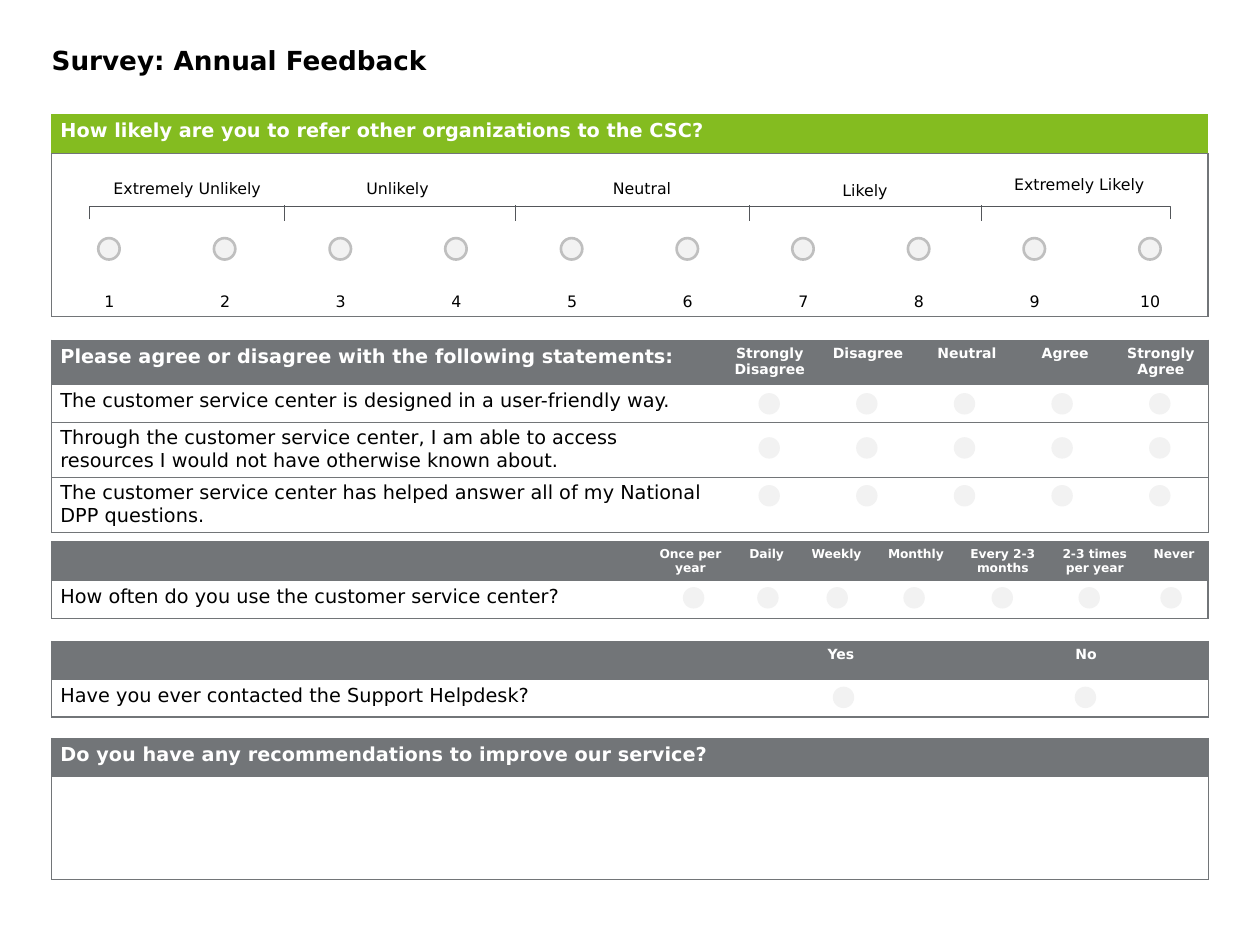
"""Build a one-page annual feedback survey slide."""
from dataclasses import dataclass

from lxml import etree
from pptx import Presentation
from pptx import util as u
from pptx.dml.color import RGBColor
from pptx.enum import shapes, text
from pptx.oxml import ns


@dataclass(frozen=True)
class Theme:
    """Colours, font and type sizes of the survey."""
    font: str = "DejaVu Sans"
    black: str = "000000"
    white: str = "FFFFFF"
    green: str = "84BC20"
    grey: str = "727578"
    scale_line: str = "53565A"
    dot: str = "F2F2F2"
    dot_line: str = "BFBFBF"
    title: int = 15
    body: int = 11
    label: int = 9
    option: int = 8
    small_option: int = 7


@dataclass(frozen=True)
class TextStyle:
    """Look of one piece of text."""
    size: int
    color: str
    bold: bool = False
    align: text.PP_ALIGN = text.PP_ALIGN.LEFT
    anchor: text.MSO_ANCHOR = text.MSO_ANCHOR.TOP


THEME = Theme()
CENTER = text.PP_ALIGN.CENTER
LEFT, WIDTH = 0.41, 9.18
DOT_SIZE = 0.17
NO_TABLE_STYLE = "{2D5ABB26-0587-4C30-8999-92F81FD0307C}"
TITLE = TextStyle(THEME.title, THEME.black, True)
HEADING = TextStyle(THEME.body, THEME.white, True)
OPTION = TextStyle(THEME.option, THEME.white, True, CENTER)
SMALL_OPTION = TextStyle(THEME.small_option, THEME.white, True, CENTER)
STATEMENT = TextStyle(THEME.body, THEME.black)
SCORE = TextStyle(THEME.label, THEME.black, False, CENTER, text.MSO_ANCHOR.BOTTOM)
LABEL = TextStyle(THEME.label, THEME.black, False, CENTER, text.MSO_ANCHOR.MIDDLE)


def rgb(color):
    """Turn a hex string into a colour."""
    return RGBColor.from_string(color)


def write(frame, words, style):
    """Write one styled paragraph into a text frame."""
    paragraph = frame.paragraphs[0]
    paragraph.alignment = style.align
    if not words:
        etree.SubElement(paragraph._p, ns.qn("a:endParaRPr"), sz=str(style.size * 100))
        return paragraph
    run = paragraph.add_run()
    run.text = words
    run.font.name = THEME.font
    run.font.size = u.Pt(style.size)
    run.font.bold = style.bold
    run.font.color.rgb = rgb(style.color)
    return paragraph


def set_margins(frame, side, end):
    """Set equal left and right, and equal top and bottom margins."""
    frame.margin_left = frame.margin_right = u.Inches(side)
    frame.margin_top = frame.margin_bottom = u.Inches(end)


def set_borders(cell, sides, color):
    """Draw a thin line on each named side of a cell and none elsewhere."""
    properties = cell._tc.get_or_add_tcPr()
    for side in "LRTB":
        line = etree.SubElement(properties, ns.qn(f"a:ln{side}"), w=str(u.Pt(0.75)))
        if side in sides:
            fill = etree.SubElement(line, ns.qn("a:solidFill"))
            etree.SubElement(fill, ns.qn("a:srgbClr"), val=color)
        else:
            etree.SubElement(line, ns.qn("a:noFill"))


def add_survey_table(slide, top, widths, heights, rows, first_styles, other_styles,
                     accent=THEME.grey):
    """Add a table with a coloured heading row and outlined answer rows."""
    frame = slide.shapes.add_table(
        len(rows), len(widths), u.Inches(LEFT), u.Inches(top),
        u.Inches(sum(widths)), u.Inches(sum(heights)))
    table = frame.table
    table.first_row = table.horz_banding = False
    table._tbl.tblPr.find(ns.qn("a:tableStyleId")).text = NO_TABLE_STYLE
    for column, width in zip(table.columns, widths):
        column.width = u.Inches(width)
    for index, (row, height) in enumerate(zip(rows, heights)):
        table.rows[index].height = u.Inches(height)
        heading = index == 0
        for position, words in enumerate(row):
            cell = table.cell(index, position)
            styles = other_styles if position else first_styles
            style = styles[0 if heading else 1]
            sides = "TB" + "L" * (position == 0) + "R" * (position == len(widths) - 1)
            set_borders(cell, sides, accent if heading else THEME.grey)
            if heading:
                cell.fill.solid()
                cell.fill.fore_color.rgb = rgb(accent)
            else:
                cell.fill.background()
            set_margins(cell, 0.07, 0.04)
            cell.vertical_anchor = style.anchor
            write(cell.text_frame, words, style)
    return table


def add_plain_shape(slide, kind, left, top, width, height, fill=None, line=None, weight=0.75):
    """Add a shape without shadow, with the given fill and line."""
    shape = slide.shapes.add_shape(
        kind, u.Inches(left), u.Inches(top), u.Inches(width), u.Inches(height))
    shape.shadow.inherit = False
    if fill:
        shape.fill.solid()
        shape.fill.fore_color.rgb = rgb(fill)
    else:
        shape.fill.background()
    if line:
        shape.line.color.rgb = rgb(line)
        shape.line.width = u.Pt(weight)
    else:
        shape.line.fill.background()
    return shape


def add_dots(slide, lefts, top, line=None):
    """Add a row of round answer buttons."""
    for left in lefts:
        add_plain_shape(slide, shapes.MSO_SHAPE.OVAL, left, top, DOT_SIZE, DOT_SIZE,
                        THEME.dot, line, 1.5)


def add_tick(slide, x):
    """Add a short vertical divider under the scale."""
    tick = slide.shapes.add_connector(
        shapes.MSO_CONNECTOR.STRAIGHT, u.Inches(x), u.Inches(1.63), u.Inches(x), u.Inches(1.75))
    tick.line.color.rgb = rgb(THEME.scale_line)
    tick.line.width = u.Pt(0.75)
    etree.SubElement(tick._element.spPr, ns.qn("a:effectLst"))


def add_label(slide, words, left, top, width, height):
    """Add a centred label above the scale."""
    shape = add_plain_shape(slide, shapes.MSO_SHAPE.RECTANGLE, left, top, width, height,
                            THEME.white)
    frame = shape.text_frame
    frame.word_wrap = True
    frame.vertical_anchor = LABEL.anchor
    set_margins(frame, 0, 0.1)
    write(frame, words, LABEL).line_spacing = 1.06


def add_title(slide, words):
    """Place and fill the title placeholder."""
    title = slide.shapes.title
    title.left, title.top = u.Inches(LEFT), u.Inches(0.35)
    title.width, title.height = u.Inches(WIDTH), u.Inches(0.32)
    set_margins(title.text_frame, 0, 0)
    title.text_frame.vertical_anchor = TITLE.anchor
    write(title.text_frame, words, TITLE)


def add_scale(slide):
    """Add the ten-point likelihood question."""
    question = "How likely are you to refer other organizations to the CSC?"
    scores = [str(score) for score in range(1, 11)]
    table = add_survey_table(
        slide, 0.91, [WIDTH / 10] * 10, [0.31, 1.29], [[question] + [""] * 9, scores],
        (HEADING, SCORE), (HEADING, SCORE), THEME.green)
    table.cell(0, 0).merge(table.cell(0, 9))
    add_dots(slide, [0.78 + WIDTH / 10 * step for step in range(10)], 1.89, THEME.dot_line)
    bracket = add_plain_shape(slide, shapes.MSO_SHAPE.RIGHT_BRACKET, 4.95, -2.6, 0.1, 8.58,
                              line=THEME.scale_line)
    bracket.adjustments[0] = 0
    bracket.rotation = 270
    for x in (2.26, 4.09, 5.95, 7.79):
        add_tick(slide, x)
    for words, left, top, width, height in (
            ("Extremely Unlikely", 0.71, 1.39, 1.55, 0.2),
            ("Unlikely", 2.38, 1.39, 1.55, 0.2),
            ("Neutral", 4.32, 1.39, 1.55, 0.2),
            ("Likely", 6.02, 1.39, 1.69, 0.23),
            ("Extremely Likely", 7.79, 1.36, 1.55, 0.2)):
        add_label(slide, words, left, top, width, height)


def add_questions(slide):
    """Add the agreement, frequency, contact and comment questions."""
    statements = ("The customer service center is designed in a user-friendly way.",
                  "Through the customer service center, I am able to access resources "
                  "I would not have otherwise known about.",
                  "The customer service center has helped answer all of my National DPP questions.")
    first = (HEADING, STATEMENT)
    add_survey_table(
        slide, 2.7, [5.31, 0.78, 0.78, 0.79, 0.77, 0.75], [0.35, 0.3, 0.43, 0.44],
        [["Please agree or disagree with the following statements:", "Strongly Disagree",
          "Disagree", "Neutral", "Agree", "Strongly Agree"]]
        + [[statement] + [""] * 5 for statement in statements], first, (OPTION, OPTION))
    for top in (3.12, 3.47, 3.85):
        add_dots(slide, [6.02 + 0.775 * step for step in range(5)], top)
    add_survey_table(
        slide, 4.3, [4.71, 0.72, 0.49, 0.62, 0.64, 0.74, 0.72, 0.54], [0.3, 0.3],
        [["", "Once per year", "Daily", "Weekly", "Monthly", "Every 2-3 months",
          "2-3 times per year", "Never"],
         ["How often do you use the customer service center?"] + [""] * 7],
        first, (SMALL_OPTION, SMALL_OPTION))
    add_dots(slide, (5.42, 6.01, 6.56, 7.17, 7.87, 8.56, 9.21), 4.66)
    add_survey_table(
        slide, 5.09, [5.29, 1.95, 1.94], [0.3, 0.3],
        [["", "Yes", "No"], ["Have you ever contacted the Support Helpdesk?", "", ""]],
        first, (OPTION, OPTION))
    add_dots(slide, (6.61, 8.53), 5.45)
    add_survey_table(
        slide, 5.86, [WIDTH], [0.3, 0.82],
        [["Do you have any recommendations to improve our service?"], [""]], first, first)


def main():
    """Build and save the survey slide."""
    presentation = Presentation()
    presentation.slide_width, presentation.slide_height = u.Inches(10), u.Inches(7.5)
    slide = presentation.slides.add_slide(presentation.slide_layouts[5])
    add_title(slide, "Survey: Annual Feedback")
    add_scale(slide)
    add_questions(slide)
    presentation.save("out.pptx")


if __name__ == "__main__":
    main()
